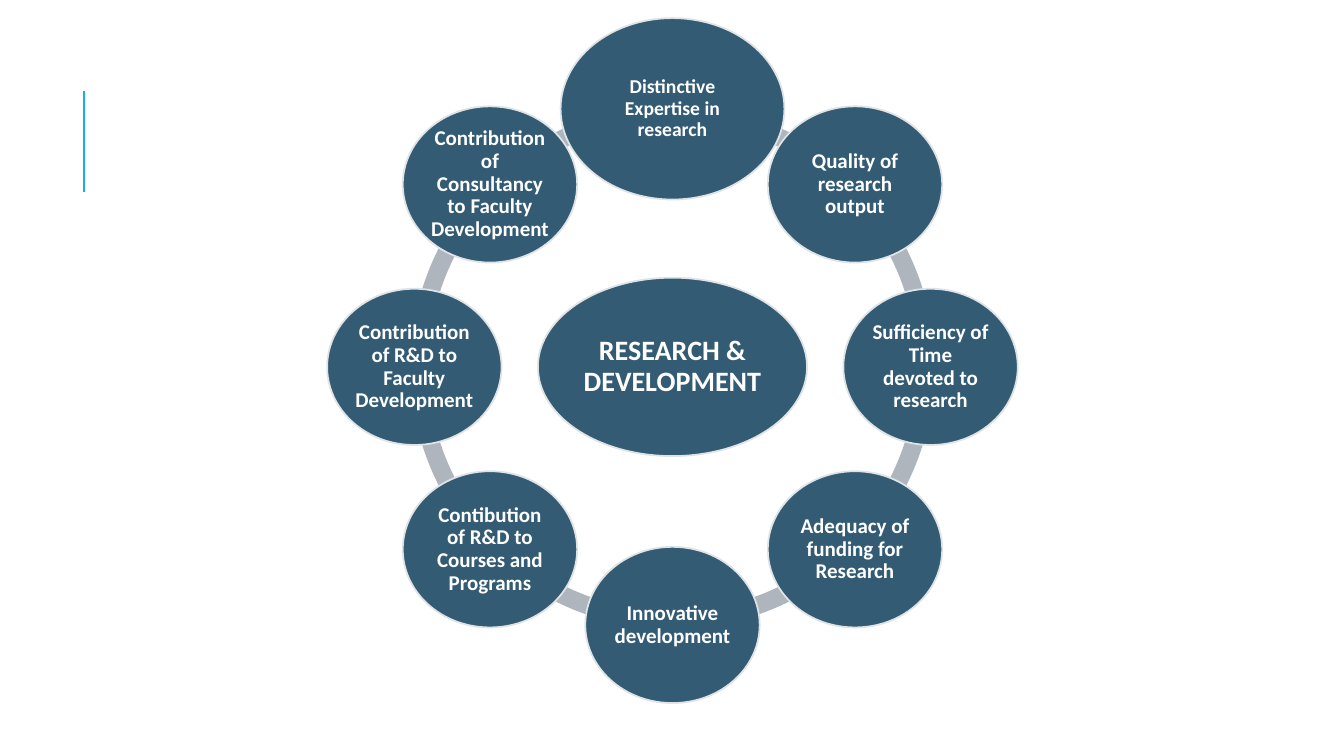
from dataclasses import dataclass
from math import cos, radians, sin

from lxml.etree import SubElement
from pptx import Presentation
from pptx.dml.color import RGBColor
from pptx.enum.shapes import MSO_CONNECTOR, MSO_SHAPE
from pptx.enum.text import MSO_ANCHOR, PP_ALIGN
from pptx.oxml.ns import qn
from pptx.util import Inches, Pt


@dataclass(frozen=True)
class Theme:
    """Colours, font and type sizes of the slide."""
    accent: RGBColor = RGBColor(0x1C, 0xAD, 0xE4)
    node: RGBColor = RGBColor(0x33, 0x5B, 0x74)
    outline: RGBColor = RGBColor(0xDF, 0xE3, 0xE5)
    ring: RGBColor = RGBColor(0xAE, 0xB5, 0xBC)
    text: RGBColor = RGBColor(0xFF, 0xFF, 0xFF)
    font: str = "Calibri"
    hub_size: int = 20
    lead_size: int = 14
    topic_size: int = 15


THEME = Theme()
HUB = "RESEARCH & DEVELOPMENT"
TOPICS = [
    "Distinctive Expertise in research",
    "Quality of research output",
    "Sufficiency of Time devoted to research",
    "Adequacy of funding for Research",
    "Innovative development",
    "Contibution of R&D to Courses and Programs",
    "Contribution of R&D to Faculty Development",
    "Contribution of Consultancy to Faculty Development",
]


def write_label(frame, text, *, size, inset):
    """Write a centred bold label into a text frame."""
    frame.word_wrap = True
    frame.vertical_anchor = MSO_ANCHOR.MIDDLE
    frame.margin_left = frame.margin_right = Inches(inset)
    frame.margin_top = frame.margin_bottom = Inches(inset)
    label = frame.paragraphs[0]
    label.alignment = PP_ALIGN.CENTER
    label.line_spacing = 0.9
    run = label.add_run()
    run.text = text
    run.font.name = THEME.font
    run.font.size = Pt(size)
    run.font.bold = True
    run.font.color.rgb = THEME.text


def add_node(slide, center, extent, text, *, size, inset=0.02):
    """Draw a labelled ellipse around its centre."""
    (x, y), (width, height) = center, extent
    node = slide.shapes.add_shape(
        MSO_SHAPE.OVAL, Inches(x - width / 2), Inches(y - height / 2),
        Inches(width), Inches(height))
    node.shadow.inherit = False
    node.fill.solid()
    node.fill.fore_color.rgb = THEME.node
    node.line.color.rgb = THEME.outline
    node.line.width = Pt(1.25)
    write_label(node.text_frame, text, size=size, inset=inset)


def add_ring(slide, left, top, side, count):
    """Draw a ring of equal arcs inside a square box."""
    step = 360 / count
    for index in range(count):
        start = index * step
        arc = slide.shapes.add_shape(
            MSO_SHAPE.BLOCK_ARC, Inches(left), Inches(top), Inches(side), Inches(side))
        arc.shadow.inherit = False
        arc.fill.solid()
        arc.fill.fore_color.rgb = THEME.ring
        arc.line.fill.background()
        arc.adjustments[0] = start * 0.6
        arc.adjustments[1] = (start + step) % 360 * 0.6
        arc.adjustments[2] = 0.034


def add_cycle(slide, left, top, side):
    """Place the ring, the hub and the topics around it in a square box."""
    add_ring(slide, left, top, side, len(TOPICS))
    center_x, center_y = left + side / 2, top + side / 2
    radius = side / 2 - 0.04
    add_node(slide, (center_x, center_y), (2.67, 1.77), HUB,
             size=THEME.hub_size, inset=0.03)
    for index, topic in enumerate(TOPICS):
        angle = radians(index * 360 / len(TOPICS) - 90)
        center = center_x + radius * cos(angle), center_y + radius * sin(angle)
        extent, size = ((1.73, 1.55), THEME.topic_size) if index else ((2.22, 1.8), THEME.lead_size)
        add_node(slide, center, extent, topic, size=size)


def add_accent_rule(slide, left, top, height):
    """Draw the vertical accent rule down the given height."""
    rule = slide.shapes.add_connector(
        MSO_CONNECTOR.STRAIGHT, Inches(left), Inches(top + height), Inches(left), Inches(top))
    rule.line.color.rgb = THEME.accent
    rule.line.width = Pt(1.5)
    SubElement(rule.element.spPr, qn("a:effectLst"))


def main():
    """Build and save the presentation."""
    presentation = Presentation()
    presentation.slide_width = Inches(13.33)
    presentation.slide_height = Inches(7.5)
    slide = presentation.slides.add_slide(presentation.slide_layouts[6])
    add_accent_rule(slide, 0.83, 0.9, 1)
    add_cycle(slide, 4.07, 1.04, 5.2)
    presentation.save("out.pptx")


if __name__ == "__main__":
    main()
